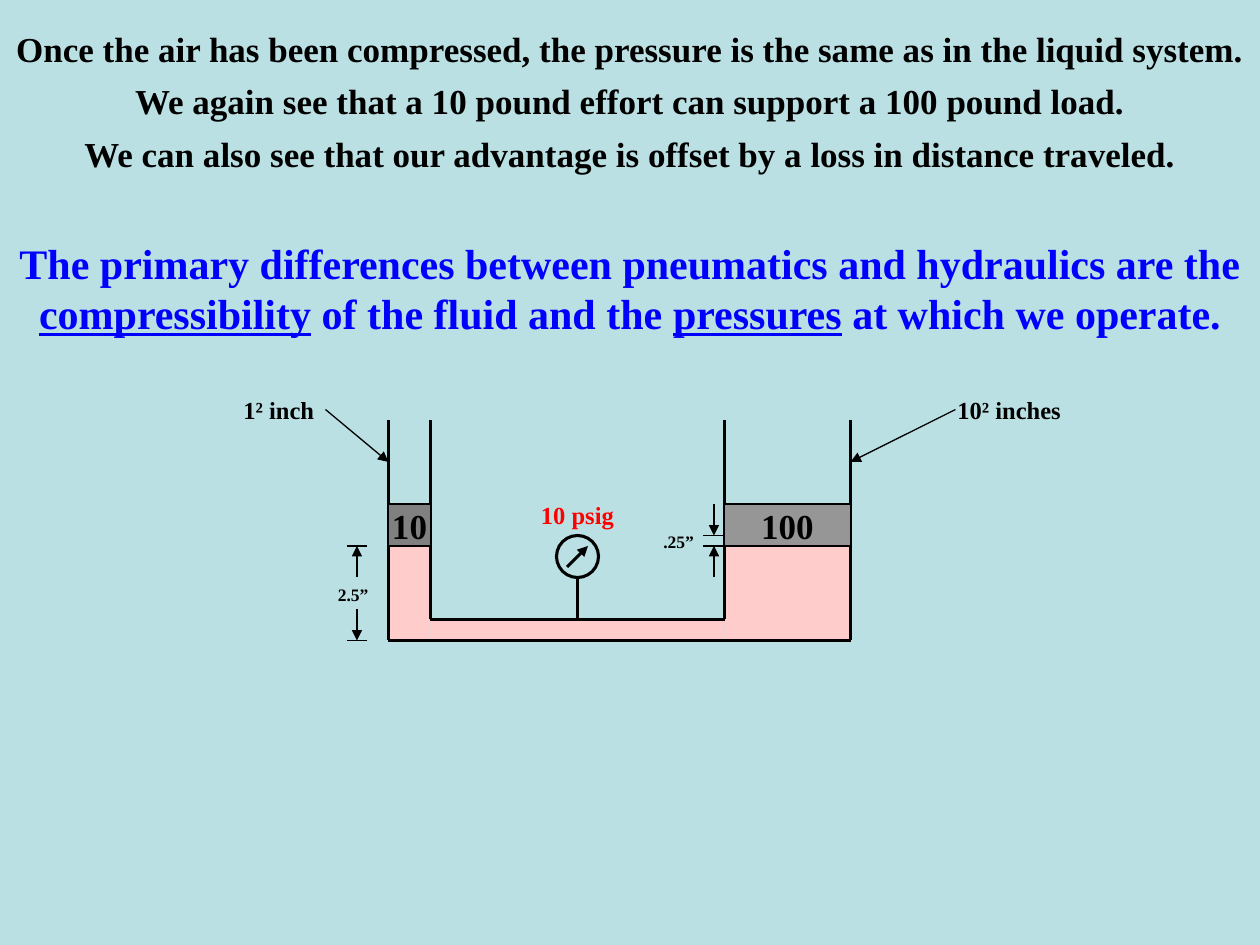
import pptx
import pptx.dml.color
import pptx.enum.shapes
import pptx.enum.text
import pptx.util
from dataclasses import dataclass
from lxml import etree

Pt = pptx.util.Pt
RGB = pptx.dml.color.RGBColor.from_string
ALIGN = pptx.enum.text.PP_ALIGN
ANCHOR = pptx.enum.text.MSO_ANCHOR
SHAPE = pptx.enum.shapes.MSO_SHAPE
A = "{http://schemas.openxmlformats.org/drawingml/2006/main}"


@dataclass(frozen=True)
class Theme:
    font: str = "Times New Roman"
    background: str = "BBE0E3"
    ink: str = "000000"
    key: str = "0000FF"
    reading: str = "FF0000"
    liquid: str = "FFCCCC"
    small_piston: str = "808080"
    large_piston: str = "969696"
    key_size: int = 24
    text_size: int = 20
    label_size: int = 14
    dimension_size: int = 10
    thin: float = 0.75
    wall: float = 1.25
    gauge: float = 1.75
    space_before: float = 0.1  # share of the type size


T = Theme()


def write(tf, runs, size, color=T.ink, align=ALIGN.LEFT, anchor=ANCHOR.TOP, wrap=True):
    """Fill a text frame with one paragraph of (text, underlined) runs."""
    tf.word_wrap = wrap
    tf.auto_size = pptx.enum.text.MSO_AUTO_SIZE.NONE
    tf.vertical_anchor = anchor
    p = tf.paragraphs[0]
    p.alignment = align
    p.space_before = Pt(0 if anchor == ANCHOR.MIDDLE else size * T.space_before)
    for text, underlined in runs:
        r = p.add_run()
        r.text = text
        r.font.name = T.font
        r.font.size = Pt(size)
        r.font.bold = True
        r.font.underline = underlined
        r.font.color.rgb = RGB(color)


def add_statements(slide, left, top, width, pitch, lines):
    for i, line in enumerate(lines):
        sp = slide.shapes.add_textbox(Pt(left), Pt(top + i * pitch), Pt(width), Pt(31))
        write(sp.text_frame, [(line, False)], T.text_size, align=ALIGN.CENTER)


def add_key_message(slide, left, top, width, height, runs):
    sp = slide.shapes.title
    sp.left, sp.top, sp.width, sp.height = Pt(left), Pt(top), Pt(width), Pt(height)
    write(sp.text_frame, runs, T.key_size, T.key, ALIGN.CENTER)


class Grid:
    """Draws parts in grid steps from the corner of a box."""

    def __init__(self, slide, left, top, step):
        self.shapes = slide.shapes
        self.left, self.top, self.step = left, top, step

    def at(self, x, y):
        return Pt(self.left + x * self.step), Pt(self.top + y * self.step)

    def size(self, w, h):
        return Pt(w * self.step), Pt(h * self.step)

    def shape(self, kind, x, y, w, h, fill, weight=None):
        sp = self.shapes.add_shape(kind, *self.at(x, y), *self.size(w, h))
        sp.shadow.inherit = False
        sp.fill.solid()
        sp.fill.fore_color.rgb = RGB(fill)
        if weight:
            sp.line.color.rgb = RGB(T.ink)
            sp.line.width = Pt(weight)
        else:
            sp.line.fill.background()
        return sp

    def line(self, start, end, weight=T.thin, arrow=False):
        cx = self.shapes.add_connector(
            pptx.enum.shapes.MSO_CONNECTOR.STRAIGHT, *self.at(*start), *self.at(*end))
        cx.line.color.rgb = RGB(T.ink)
        cx.line.width = Pt(weight)
        if arrow:
            etree.SubElement(cx.line._get_or_add_ln(), A + "tailEnd", type="triangle")
        etree.SubElement(cx._element.spPr, A + "effectLst")

    def label(self, text, x, y, w, h, size, color=T.ink, align=ALIGN.LEFT):
        sp = self.shapes.add_textbox(*self.at(x, y), *self.size(w, h))
        write(sp.text_frame, [(text, False)], size, color, align)


def add_dimension(g, x, ends, arrow_starts, text, text_x, text_y):
    """Two ticks with an arrow to each, and the measure beside them."""
    for y, start in zip(ends, arrow_starts):
        g.line((x + 1, y), (x - 1, y))
        g.line((x, start), (x, y), arrow=True)
    g.label(text, text_x, text_y, 6, 3.25, T.dimension_size)


def add_gauge(g, x, pipe, reading):
    g.line((x, pipe), (x, pipe - 4), T.gauge)
    g.shape(SHAPE.OVAL, x - 2, pipe - 8, 4, 4, T.background, T.gauge)
    g.line((x - 1, pipe - 5), (x + 1, pipe - 7), T.gauge, arrow=True)
    g.label(reading, x - 7, pipe - 12, 14, 4, T.label_size, T.reading, ALIGN.CENTER)


def add_cylinders(slide, left, top):
    g = Grid(slide, left, top, 6)
    rim, piston, surface, pipe, floor = 3, 11, 15, 22, 24
    small, large = (15, 19), (47, 59)

    for x1, x2 in (small, large):
        g.shape(SHAPE.RECTANGLE, x1, surface, x2 - x1, floor - surface, T.liquid)
    g.shape(SHAPE.RECTANGLE, small[1], pipe, large[0] - small[1], floor - pipe, T.liquid)

    for x, bottom in ((small[0], floor), (small[1], pipe), (large[0], pipe), (large[1], floor)):
        g.line((x, rim), (x, bottom), T.wall)
    g.line((small[1], pipe), (large[0], pipe), T.wall)
    g.line((small[0], floor), (large[1], floor), T.wall)

    for (x1, x2), load, fill in ((small, "10", T.small_piston), (large, "100", T.large_piston)):
        sp = g.shape(SHAPE.RECTANGLE, x1, piston, x2 - x1, surface - piston, fill, T.thin)
        write(sp.text_frame, [(load, False)], T.text_size, align=ALIGN.CENTER,
              anchor=ANCHOR.MIDDLE, wrap=False)

    g.label("1² inch", 0, 0, 11, 4, T.label_size)
    g.line((9, 2), (small[0], 7), arrow=True)
    g.label("10² inches", 68, 0, 13, 4, T.label_size)
    g.line((69, 2), (large[1], 7), arrow=True)

    add_dimension(g, 12, (surface, floor), (18, 21), "2.5”", 9, 18)
    add_dimension(g, 46, (surface - 1, surface), (piston, 18), ".25”", 40, 13)
    add_gauge(g, (small[1] + large[0]) / 2, pipe, "10 psig")


def main():
    prs = pptx.Presentation()
    prs.slide_width, prs.slide_height = Pt(720), Pt(540)
    slide = prs.slides.add_slide(prs.slide_layouts[5])
    slide.background.fill.solid()
    slide.background.fill.fore_color.rgb = RGB(T.background)

    add_cylinders(slide, 132, 222)
    add_statements(slide, 0, 12, 720, 30, [
        "Once the air has been compressed, the pressure is the same as in the liquid system.",
        "We again see that a 10 pound effort can support a 100 pound load.",
        "We can also see that our advantage is offset by a loss in distance traveled.",
    ])
    add_key_message(slide, 0, 132, 720, 65, [
        ("The primary differences between pneumatics and hydraulics are the ", False),
        ("compressibility", True),
        (" of the fluid and the ", False),
        ("pressures", True),
        (" at which we operate.", False),
    ])
    prs.save("out.pptx")


if __name__ == "__main__":
    main()
